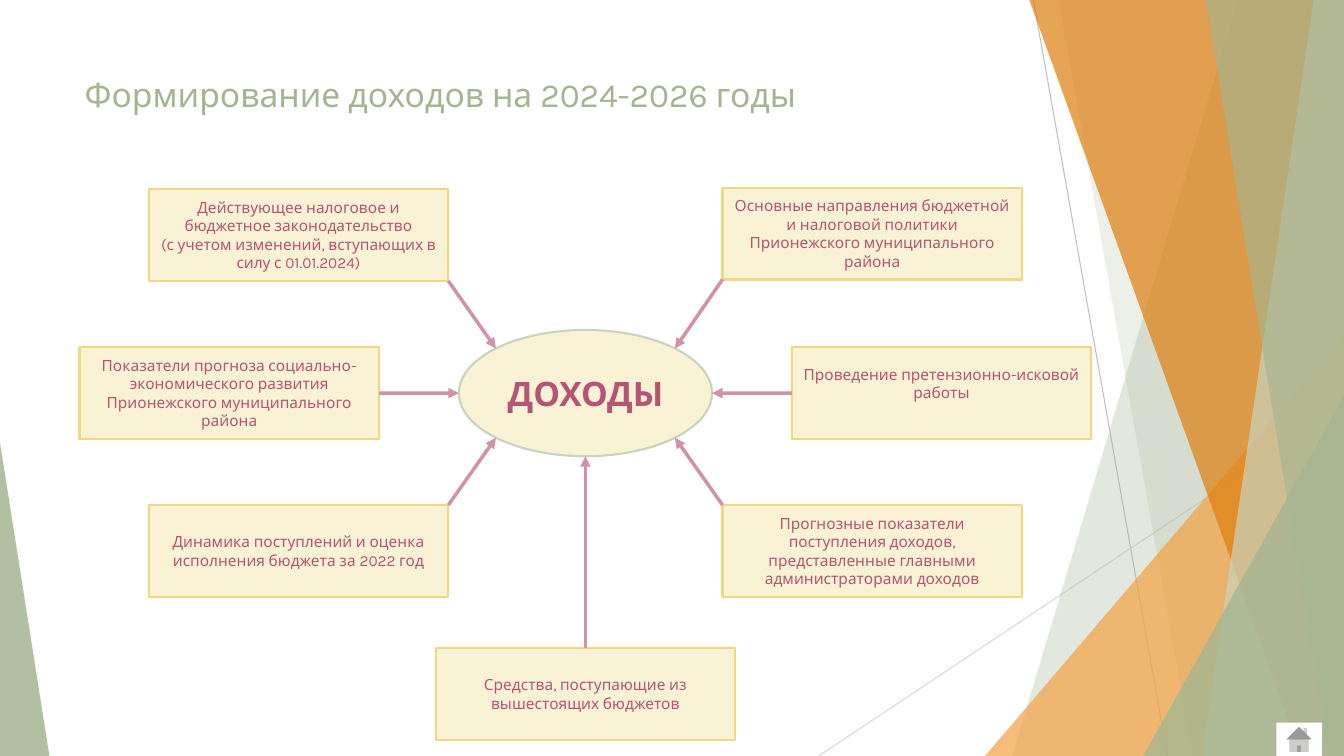
from dataclasses import dataclass
from math import sqrt

from pptx import Presentation
from pptx import util as u
from pptx.dml import color
from pptx.enum import shapes, text
from pptx.oxml import ns, xmlchemy

WIDE, HIGH = 13.33, 7.5
FONT = "Karla"
SAGE, PALE, CREAM, GOLD = "A5B592", "C9D3BE", "FAF2D4", "F1D77F"
PLUM, ROSE = "B55475", "D092A7"
HUB = (43.56, 52)
REACH = (9.42, 8.35)
HALF = (11.14, 6.07)
KIND = shapes.MSO_SHAPE


@dataclass
class Band:
    top: float
    foot: float
    hue: str
    alpha: int


@dataclass
class Wedge:
    left: float
    top: float
    wide: float
    peak: int
    hue: str
    alpha: int


@dataclass
class Source:
    words: str
    side: int
    level: int
    shift: float
    row: float
    inset: float = 0.67


DECOR = [
    Band(92.12, 75.32, SAGE, 30),
    Band(78.77, 88.75, SAGE, 20),
    Wedge(73.29, 44.4, 26.71, 1, "F3A447", 72),
    Band(76.59, 96.85, "DD7E0E", 70),
    Band(97.75, 89.42, PALE, 70),
    Band(89.72, 98.87, SAGE, 65),
    Wedge(85.07, 52.4, 14.93, 1, SAGE, 80),
    Wedge(0, 58.53, 3.68, 0, SAGE, 85),
]

NEAR, FAR = 21.34, 26.5
SOURCES = [
    Source("Основные направления бюджетной и налоговой политики "
           "Прионежского муниципального района", 1, -1, NEAR, 30.9),
    Source("Проведение претензионно-исковой работы", 1, 0, FAR, 52, 3.2),
    Source("Прогнозные показатели поступления доходов, представленные "
           "главными администраторами доходов", 1, 1, NEAR, 72.87),
    Source("Действующее налоговое и бюджетное законодательство\v"
           "(с учетом изменений, вступающих в силу с 01.01.2024)", -1, -1, NEAR, 31.1),
    Source("Показатели прогноза социально-экономического развития "
           "Прионежского муниципального района", -1, 0, FAR, 52),
    Source("Динамика поступлений и оценка исполнения бюджета за 2022 год",
           -1, 1, NEAR, 72.87),
    Source("Средства, поступающие из вышестоящих бюджетов", 0, 1, 0, 91.8),
]


def across(share: float) -> int:
    return u.Inches(WIDE * share / 100)


def down(share: float) -> int:
    return u.Inches(HIGH * share / 100)


def tint(hue: str) -> color.RGBColor:
    return color.RGBColor.from_string(hue)


def paint(shape, hue: str, edge: str = "", alpha: int = 100) -> None:
    shape.shadow.inherit = False
    shape.fill.solid()
    shape.fill.fore_color.rgb = tint(hue)
    if alpha < 100:
        node = shape.fill._xPr.find(".//" + ns.qn("a:srgbClr"))
        xmlchemy.OxmlElement("a:alpha")
        mark = xmlchemy.OxmlElement("a:alpha")
        mark.set("val", str(alpha * 1000))
        node.append(mark)
    if edge:
        shape.line.color.rgb = tint(edge)
        shape.line.width = u.Pt(1.5)
    else:
        shape.line.fill.background()


def write(shape, words: str, size: int, hue: str, bold: bool = False,
          align=text.PP_ALIGN.CENTER) -> None:
    frame = shape.text_frame
    frame.word_wrap = True
    frame.vertical_anchor = text.MSO_ANCHOR.MIDDLE
    frame.text = words
    for para in frame.paragraphs:
        para.alignment = align
        for run in para.runs:
            run.font.name = FONT
            run.font.size = u.Pt(size)
            run.font.bold = bold
            run.font.color.rgb = tint(hue)


def place(slide, kind, left: float, top: float, wide: float, high: float):
    return slide.shapes.add_shape(kind, across(left), down(top), across(wide), down(high))


def link(slide, start: tuple, end: tuple, hue: str, width: float):
    line = slide.shapes.add_connector(
        shapes.MSO_CONNECTOR.STRAIGHT,
        across(start[0]), down(start[1]), across(end[0]), down(end[1]))
    line.line.color.rgb = tint(hue)
    line.line.width = u.Pt(width)
    line._element.spPr.append(xmlchemy.OxmlElement("a:effectLst"))
    return line


def band(slide, item: Band) -> None:
    pen = slide.shapes.build_freeform(across(item.top), 0)
    pen.add_line_segments([(across(100), 0), (across(100), down(100)),
                           (across(item.foot), down(100))])
    paint(pen.convert_to_shape(), item.hue, alpha=item.alpha)


def wedge(slide, item: Wedge) -> None:
    shape = place(slide, KIND.ISOSCELES_TRIANGLE, item.left, item.top,
                  item.wide, 100 - item.top)
    shape.adjustments[0] = item.peak
    paint(shape, item.hue, alpha=item.alpha)


def box(slide, item: Source):
    shape = place(slide, KIND.FLOWCHART_PROCESS, HUB[0] + item.shift * item.side - HALF[0],
                  item.row - HALF[1], 2 * HALF[0], 2 * HALF[1])
    paint(shape, CREAM, GOLD)
    write(shape, item.words, 11, PLUM)
    shape.text_frame.margin_bottom = down(item.inset)
    return shape


def spoke(slide, item: Source, shape) -> None:
    ratio = 1 / sqrt(2) if item.side and item.level else 1
    start = (HUB[0] + item.side * (item.shift - HALF[0]), item.row - item.level * HALF[1])
    end = (HUB[0] + item.side * REACH[0] * ratio, HUB[1] + item.level * REACH[1] * ratio)
    line = link(slide, start, end, ROSE, 2.5)
    sites = {(1, 0): 1, (-1, 0): 3, (0, 1): 0}
    site = sites.get((item.side, item.level))
    if site is not None:
        line.begin_connect(shape, site)
    tip = xmlchemy.OxmlElement("a:tailEnd")
    tip.set("type", "triangle")
    line.line._get_or_add_ln().append(tip)


def main() -> None:
    deck = Presentation()
    deck.slide_width, deck.slide_height = across(100), down(100)
    slide = deck.slides.add_slide(deck.slide_layouts[6])

    link(slide, (76.89, 0), (86.87, 100), "BFBFBF", 0.75)
    link(slide, (100, 53.73), (60.92, 100), "D9D9D9", 0.75)
    for item in DECOR:
        if isinstance(item, Band):
            band(slide, item)
        else:
            wedge(slide, item)

    title = slide.shapes.add_textbox(across(5.55), down(8.93), across(70.52), down(7.07))
    write(title, "Формирование доходов на 2024-2026 годы", 24, SAGE,
          align=text.PP_ALIGN.LEFT)
    paint(place(slide, KIND.ACTION_BUTTON_HOME, 94.97, 95.6, 3.38, 4.4), "FFFFFF")

    hub = place(slide, KIND.OVAL, HUB[0] - REACH[0], HUB[1] - REACH[1],
                2 * REACH[0], 2 * REACH[1])
    paint(hub, CREAM, PALE)
    write(hub, "ДОХОДЫ", 24, PLUM, bold=True)

    cards = [box(slide, item) for item in SOURCES]
    for item, card in zip(SOURCES, cards):
        spoke(slide, item, card)
    deck.save("out.pptx")


if __name__ == "__main__":
    main()
